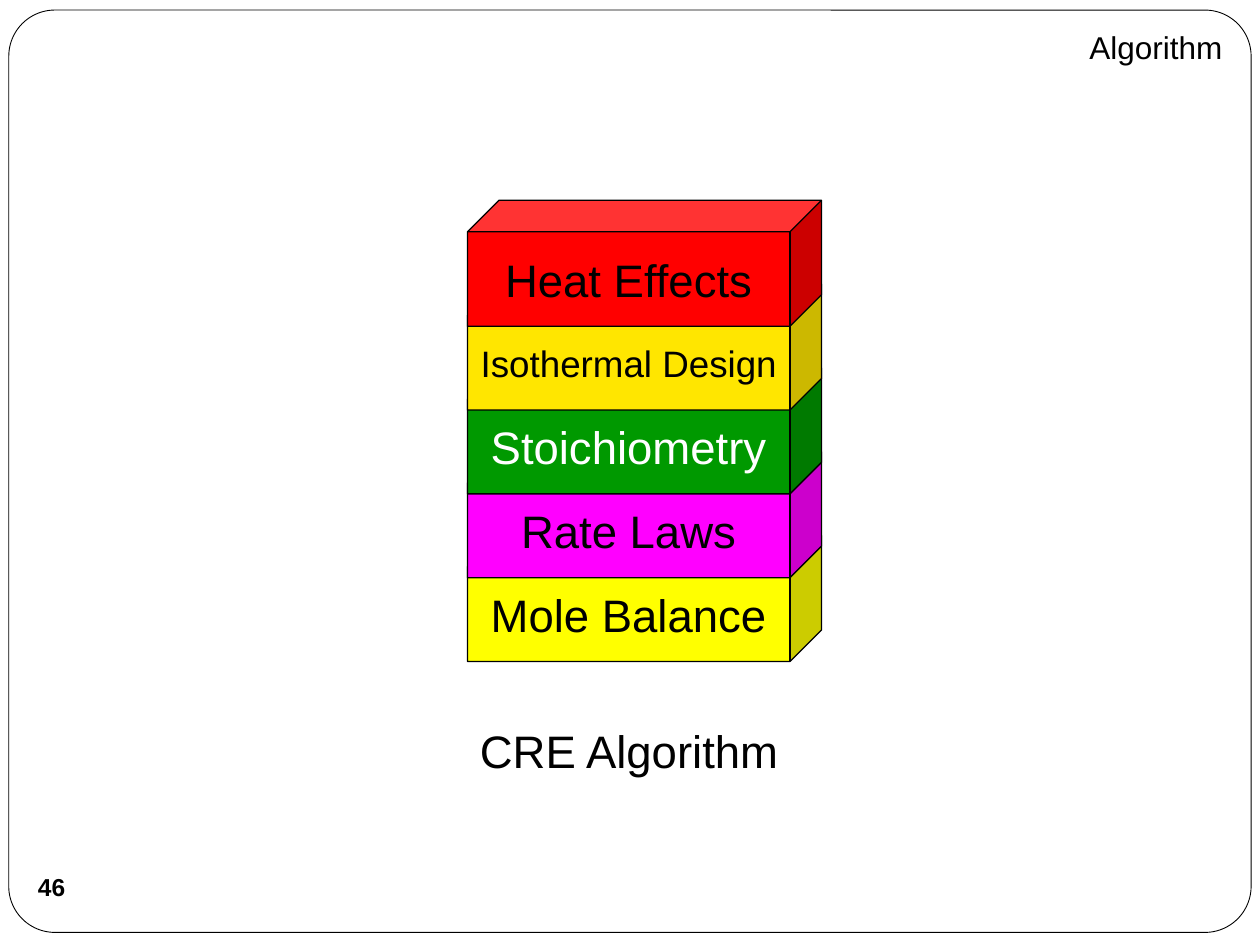
from pptx import Presentation
from pptx.dml.color import RGBColor
from pptx.enum.shapes import MSO_SHAPE
from pptx.enum.text import MSO_ANCHOR, MSO_AUTO_SIZE, PP_ALIGN
from pptx.util import Inches, Pt

CUBE = MSO_SHAPE.CUBE
OVAL = MSO_SHAPE.OVAL
ROUNDED = MSO_SHAPE.ROUNDED_RECTANGLE
MIDDLE = MSO_ANCHOR.MIDDLE
GROW = MSO_AUTO_SIZE.SHAPE_TO_FIT_TEXT
LEFT, CENTER, RIGHT = PP_ALIGN.LEFT, PP_ALIGN.CENTER, PP_ALIGN.RIGHT


def rgb(value):
    return RGBColor.from_string(value)


def write(frame, text, size, align, color="000000", bold=False):
    paragraph = frame.paragraphs[0]
    paragraph.alignment = align
    run = paragraph.add_run()
    run.text = text
    run.font.name = "Arial"
    run.font.size = Pt(size)
    run.font.bold = bold
    run.font.color.rgb = rgb(color)


prs = Presentation()
prs.slide_width = Inches(10)
prs.slide_height = Inches(7.5)
slide = prs.slides.add_slide(prs.slide_layouts[6])
shapes = slide.shapes

border = shapes.add_shape(ROUNDED, Inches(0.07), Inches(0.08), Inches(9.86), Inches(7.32))
border.adjustments[0] = 0.05
border.shadow.inherit = False
border.fill.solid()
border.fill.fore_color.rgb = rgb("FFFFFF")
border.line.color.rgb = rgb("000000")
border.line.width = Pt(0.5)

steps = [
    ("Mole Balance", "FFFF00", "000000", 26),
    ("Rate Laws", "FF00FF", "000000", 26),
    ("Stoichiometry", "009900", "FFFFFF", 26),
    ("Isothermal Design", "FFE600", "000000", 21),
    ("Heat Effects", "FF0000", "000000", 26),
]
bottom_step, top_step = 4.25, 1.59
rise = (bottom_step - top_step) / (len(steps) - 1)
for level, (step, fill, color, size) in enumerate(steps):
    block = shapes.add_shape(
        CUBE, Inches(3.71), Inches(bottom_step - level * rise), Inches(2.81), Inches(1)
    )
    block.adjustments[0] = 0.25
    block.shadow.inherit = False
    block.fill.solid()
    block.fill.fore_color.rgb = rgb(fill)
    block.line.color.rgb = rgb("000000")
    block.line.width = Pt(0.75)
    block.text_frame.word_wrap = False
    block.text_frame.vertical_anchor = MIDDLE
    write(block.text_frame, step, size, CENTER, color)

page_number = shapes.add_shape(OVAL, Inches(0.16), Inches(6.79), Inches(0.5), Inches(0.5))
page_number.shadow.inherit = False
page_number.fill.background()
page_number.line.fill.background()
number_frame = page_number.text_frame
number_frame.margin_left = number_frame.margin_right = 0
number_frame.margin_top = number_frame.margin_bottom = 0
number_frame.word_wrap = False
number_frame.vertical_anchor = MIDDLE
write(number_frame, "46", 14, CENTER, bold=True)

labels = [
    ("CRE Algorithm", 3.71, 5.69, 3.21, 0.54, 26, LEFT),
    ("Algorithm", 7.04, 0.17, 2.76, 0.4, 18, RIGHT),
]
for label, left, top, width, height, size, align in labels:
    caption = shapes.add_textbox(Inches(left), Inches(top), Inches(width), Inches(height))
    caption.text_frame.word_wrap = True
    caption.text_frame.auto_size = GROW
    write(caption.text_frame, label, size, align)

prs.save("out.pptx")
